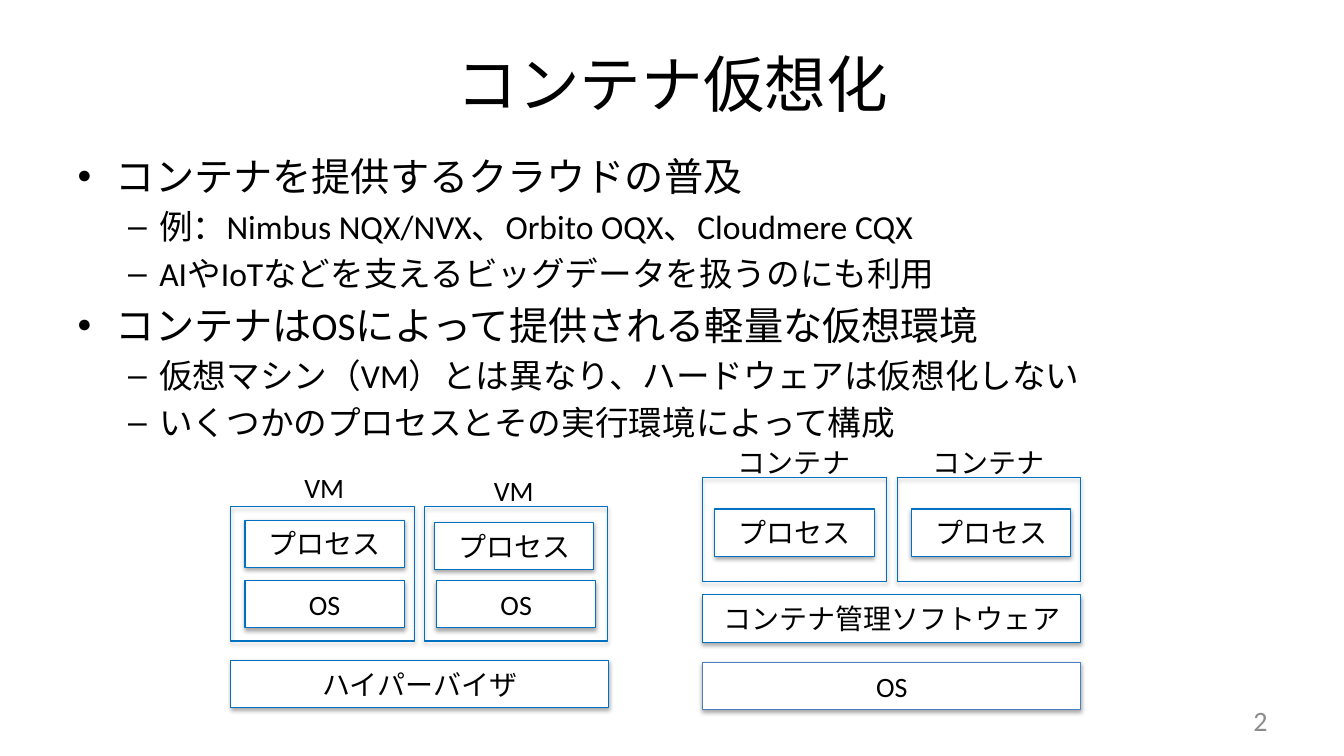
from dataclasses import dataclass

from lxml.etree import SubElement
from pptx import Presentation
from pptx.dml.color import RGBColor
from pptx.enum.shapes import MSO_SHAPE
from pptx.enum.text import MSO_ANCHOR, MSO_AUTO_SIZE, PP_ALIGN
from pptx.oxml.ns import qn
from pptx.util import Inches, Pt


@dataclass(frozen=True)
class Theme:
    font: str = "Calibri"
    text: str = "000000"
    muted: str = "8C8C8C"
    box: str = "FFFFFF"
    outline: str = "0070C0"
    host_outline: str = "4B7EBC"
    title_size: int = 44
    list_sizes: tuple = (28, 24)
    label_size: int = 20
    list_indents: tuple = ((0.38, -0.38), (0.81, -0.31))


def write_text(paragraph, text, *, theme, size, color=None, align=None):
    """Put one formatted run into a paragraph."""
    run = paragraph.add_run()
    run.text = text
    run.font.name = theme.font
    run.font.size = Pt(size)
    run.font.color.rgb = RGBColor.from_string(color or theme.text)
    paragraph.alignment = align


def place(shape, left, top, width, height):
    shape.left, shape.top = Inches(left), Inches(top)
    shape.width, shape.height = Inches(width), Inches(height)


class SlideBuilder:
    def __init__(self, slide, theme):
        self.slide = slide
        self.theme = theme

    def title(self, text, *bounds):
        shape = self.slide.shapes.title
        place(shape, *bounds)
        shape.text_frame.vertical_anchor = MSO_ANCHOR.MIDDLE
        write_text(shape.text_frame.paragraphs[0], text, theme=self.theme,
                   size=self.theme.title_size, align=PP_ALIGN.CENTER)

    def bullets(self, items, *bounds):
        shape = self.slide.placeholders[1]
        place(shape, *bounds)
        frame = shape.text_frame
        frame.auto_size = MSO_AUTO_SIZE.NONE
        for index, (level, text) in enumerate(items):
            paragraph = frame.add_paragraph() if index else frame.paragraphs[0]
            paragraph.level = level
            write_text(paragraph, text, theme=self.theme, size=self.theme.list_sizes[level])
            margin, indent = self.theme.list_indents[level]
            properties = paragraph._p.get_or_add_pPr()
            properties.set("marL", str(Inches(margin)))
            properties.set("indent", str(Inches(indent)))

    def box(self, text, *bounds, outline=None, filled=True):
        shape = self.slide.shapes.add_shape(MSO_SHAPE.RECTANGLE, *map(Inches, bounds))
        if filled:
            shape.fill.solid()
            shape.fill.fore_color.rgb = RGBColor.from_string(self.theme.box)
        else:
            shape.fill.background()
        shape.line.color.rgb = RGBColor.from_string(outline or self.theme.outline)
        shape.line.width = Pt(0.75)
        self.soft_shadow(shape)
        if text:
            shape.text_frame.vertical_anchor = MSO_ANCHOR.MIDDLE
            write_text(shape.text_frame.paragraphs[0], text, theme=self.theme,
                       size=self.theme.label_size, align=PP_ALIGN.CENTER)

    def soft_shadow(self, shape):
        shape.shadow.inherit = False
        effects = shape._element.spPr.find(qn("a:effectLst"))
        shadow = SubElement(effects, qn("a:outerShdw"), blurRad=str(Pt(3.1)),
                            dist=str(Pt(1.8)), dir="5400000", rotWithShape="0")
        color = SubElement(shadow, qn("a:srgbClr"), val=self.theme.text)
        SubElement(color, qn("a:alpha"), val="35000")

    def label(self, text, *bounds, color=None, align=PP_ALIGN.LEFT,
              anchor=MSO_ANCHOR.TOP, wrap=False):
        frame = self.slide.shapes.add_textbox(*map(Inches, bounds)).text_frame
        frame.word_wrap = wrap
        frame.vertical_anchor = anchor
        write_text(frame.paragraphs[0], text, theme=self.theme,
                   size=self.theme.label_size, color=color, align=align)


def main():
    presentation = Presentation()
    presentation.slide_width, presentation.slide_height = Inches(13.33), Inches(7.5)
    slide = presentation.slides.add_slide(presentation.slide_layouts[1])
    builder = SlideBuilder(slide, Theme())

    # Title, list and page number
    builder.title("コンテナ仮想化", 0.67, 0.3, 12, 1.04)
    builder.bullets([
        (0, "コンテナを提供するクラウドの普及"),
        (1, "例：Nimbus NQX/NVX、Orbito OQX、Cloudmere CQX"),
        (1, "AIやIoTなどを支えるビッグデータを扱うのにも利用"),
        (0, "コンテナはOSによって提供される軽量な仮想環境"),
        (1, "仮想マシン（VM）とは異なり、ハードウェアは仮想化しない"),
        (1, "いくつかのプロセスとその実行環境によって構成"),
    ], 0.67, 1.46, 12, 5.09)
    builder.label("2", 9.56, 6.95, 3.11, 0.4, color=builder.theme.muted,
                  align=PP_ALIGN.RIGHT, anchor=MSO_ANCHOR.MIDDLE, wrap=True)

    inner_width, frame_width, stack_width, row_height = 1.58, 1.82, 3.75, 0.47
    vm_left, container_left = 2.29, 6.97

    # Virtual machines: frame left, process left and top, OS left, label left and top
    for left, process_left, process_top, os_left, label_left, label_top in (
        (vm_left, 2.43, 5.16, 2.43, 2.92, 4.62),
        (4.21, 4.31, 5.18, 4.33, 4.8, 4.65),
    ):
        builder.box("OS", os_left, 5.76, inner_width, row_height)
        builder.box("プロセス", process_left, process_top, inner_width, row_height)
        builder.box("", left, 5.03, frame_width, 1.33, filled=False)
        builder.label("VM", label_left, label_top, 0.6, 0.44)
    builder.box("ハイパーバイザ", vm_left, 6.55, stack_width, row_height)

    # Containers: frame left, process left, label left
    for left, process_left, label_left in ((container_left, 7.09, 7.22), (8.9, 9.04, 9.15)):
        builder.box("プロセス", process_left, 5.05, inner_width, row_height)
        builder.box("", left, 4.74, frame_width, 1.03, filled=False)
        builder.label("コンテナ", label_left, 4.37, 1.32, 0.44)
    builder.box("コンテナ管理ソフトウェア", container_left, 5.9, stack_width, row_height)
    builder.box("OS", container_left, 6.57, stack_width, row_height,
                outline=builder.theme.host_outline)

    presentation.save("out.pptx")


if __name__ == "__main__":
    main()
